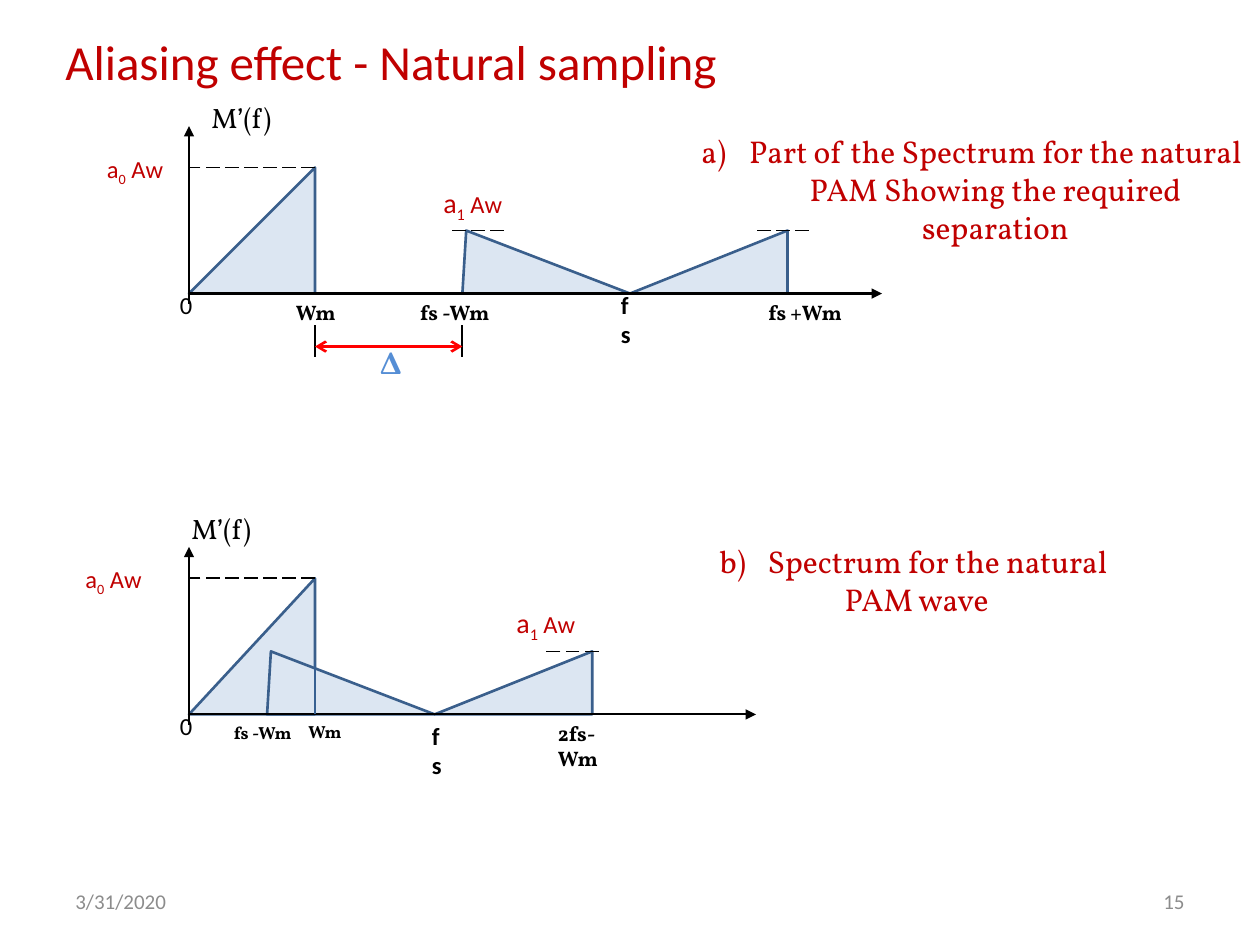
from dataclasses import dataclass

from lxml.etree import SubElement
from pptx import Presentation
from pptx.dml.color import RGBColor
from pptx.enum.dml import MSO_LINE_DASH_STYLE as DASH
from pptx.enum.shapes import MSO_CONNECTOR, MSO_SHAPE
from pptx.enum.text import MSO_ANCHOR, PP_ALIGN
from pptx.oxml.ns import qn
from pptx.util import Inches, Pt


@dataclass(frozen=True)
class Theme:
    sans: str = "Calibri"
    serif: str = "Vollkorn"
    black: str = "000000"
    red: str = "C00000"
    arrow: str = "FF0000"
    grey: str = "8C8C8C"
    delta: str = "558ED5"
    fill: str = "DCE6F2"
    edge: str = "3A5F8C"
    overlap: str = "376092"
    title: int = 28
    caption: int = 18
    axis: int = 16
    label: int = 14
    tick: int = 12
    small_tick: int = 10


T = Theme()
TICK = dict(name=T.serif, size=T.tick, bold=True)
SANS_TICK = dict(size=T.label)


def add_run(p, text, baseline=None, **fmt):
    r = p.add_run()
    r.text = text
    values = dict(name=T.sans, size=T.label, color=T.black) | fmt
    r.font.color.rgb = RGBColor.from_string(values.pop("color"))
    values["size"] = Pt(values["size"])
    for key, value in values.items():
        setattr(r.font, key, value)
    if baseline:
        r.font._element.set("baseline", str(baseline))


def add_text(s, box, *paragraphs, wrap=True, align=PP_ALIGN.LEFT,
             anchor=MSO_ANCHOR.TOP):
    """Each paragraph is a list of (text, format) runs."""
    tf = s.shapes.add_textbox(*map(Inches, box)).text_frame
    tf.word_wrap, tf.vertical_anchor = wrap, anchor
    for i, runs in enumerate(paragraphs):
        p = tf.add_paragraph() if i else tf.paragraphs[0]
        p.alignment = align
        for text, fmt in runs:
            add_run(p, text, **fmt)
    return tf


def add_line(s, start, end, color=T.black, width=1.0, dash=None,
             head=None, tail=None):
    line = s.shapes.add_connector(MSO_CONNECTOR.STRAIGHT,
                                  *map(Inches, (*start, *end)))
    line.line.color.rgb = RGBColor.from_string(color)
    line.line.width = Pt(width)
    if dash:
        line.line.dash_style = dash
    ln = line.line._get_or_add_ln()
    for tag, kind in (("a:headEnd", head), ("a:tailEnd", tail)):
        if kind:
            SubElement(ln, qn(tag), type=kind)
    SubElement(line._element.spPr, qn("a:effectLst"))


def add_triangle(s, box, apex):
    sp = s.shapes.add_shape(MSO_SHAPE.ISOSCELES_TRIANGLE, *map(Inches, box))
    sp.shadow.inherit = False
    sp.adjustments[0] = apex
    sp.fill.solid()
    sp.fill.fore_color.rgb = RGBColor.from_string(T.fill)
    sp.line.color.rgb = RGBColor.from_string(T.edge)
    sp.line.width = Pt(1.5)


def add_amplitude(s, box, index, size):
    red = dict(color=T.red)
    add_text(s, box, [("a", red | dict(size=size)),
                      (index, red | dict(size=size, baseline=-25000)),
                      (" Aw", red)])


def add_spectrum(s, x, y, peak, carrier, length, axis_name, a0, a1, dashes):
    """Axes from the origin (x, y), baseband and two sidebands around carrier.

    The other positions are measured from the origin.
    """
    side, lower, upper = 0.5, 1.33, 1.25
    add_triangle(s, (x, y - peak, 1, peak), 1)
    add_triangle(s, (x + carrier - lower, y - side, lower, side), 0.023)
    add_triangle(s, (x + carrier, y - side, upper, side), 1)
    add_line(s, (x, y + 0.08), (x, y - 1.33), width=1.25, tail="triangle")
    add_line(s, (x, y), (x + length, y), width=1.25, tail="triangle")
    add_line(s, (x + 1, y - peak), (x, y - peak), dash=DASH.LONG_DASH)
    for dx in dashes:
        add_line(s, (x + dx + 0.42, y - side), (x + dx, y - side),
                 dash=DASH.LONG_DASH)
    add_text(s, (x + axis_name, y - 1.58 - (peak - 1), 0.7, 0.37),
             [("M’(f)", dict(name=T.serif, size=T.axis))], wrap=False)
    add_text(s, (x - 0.17, y - 0.08, 0.3, 0.34), [("0", SANS_TICK)], wrap=False)
    add_amplitude(s, (x + a0, y - peak - 0.16, 0.92, 0.34), "0", T.label)
    add_amplitude(s, (x + a1, y - 0.91, 0.92, 0.37), "1", T.axis)


def add_separation(s, left, right, y):
    for x in (left, right):
        add_line(s, (x, y - 0.17), (x, y + 0.08), width=1.25)
    add_line(s, (left, y), (right, y), T.arrow, 1.5, head="arrow", tail="arrow")
    add_text(s, (left + 0.42, y - 0.08, 0.39, 0.4),
             [("Δ", dict(name=T.serif, size=T.caption, bold=True,
                         color=T.delta))], wrap=False)


def add_caption(s, box, start, *lines, wrap):
    fmt = dict(name=T.serif, size=T.caption, color=T.red)
    tf = add_text(s, box, *([(line, fmt)] for line in lines), wrap=wrap,
                  align=PP_ALIGN.CENTER)
    for i, p in enumerate(tf.paragraphs):
        pPr = p._p.get_or_add_pPr()
        pPr.set("marL", str(Inches(0.38)))
        pPr.set("indent", str(-Inches(0.38)))
        if i == 0:
            SubElement(pPr, qn("a:buFont"), typeface="+mj-lt")
            SubElement(pPr, qn("a:buAutoNum"), type="alphaLcParenR",
                       startAt=str(start))


def add_separated_panel(s, x, y):
    add_spectrum(s, x, y, peak=1, carrier=3.5, length=5.5, axis_name=0.08,
                 a0=-0.75, a1=1.92, dashes=(2.08, 4.5))
    add_text(s, (x + 0.75, y, 0.52, 0.3), [("Wm", TICK)], wrap=False)
    add_text(s, (x + 1.36, y, 1.5, 0.3), [("fs -Wm", TICK)],
             align=PP_ALIGN.CENTER, anchor=MSO_ANCHOR.MIDDLE)
    add_text(s, (x + 3.33, y - 0.08, 0.33, 0.34),
             [("fs", SANS_TICK | dict(bold=True))])
    add_text(s, (x + 4.5, y, 0.83, 0.3), [("fs +Wm", TICK)])
    add_separation(s, x + 1, x + 2.17, y + 0.42)
    add_caption(s, (5.42, y - 1.33, 4.58, 1.01), 1,
                "Part of the Spectrum for the natural PAM Showing the required "
                "separation", wrap=True)


def add_aliased_panel(s, x, y):
    add_spectrum(s, x, y, peak=1.08, carrier=1.95, length=4.5, axis_name=-0.08,
                 a0=-0.92, a1=2.5, dashes=(2.83,))
    add_line(s, (x + 1, y - 0.42), (x + 1, y), T.overlap, 1.5)
    small = TICK | dict(size=T.small_tick)
    add_text(s, (x + 0.85, y, 0.47, 0.27), [("Wm", small)], wrap=False)
    add_text(s, (x, y, 1.17, 0.28), [("fs -Wm", small)],
             align=PP_ALIGN.CENTER, anchor=MSO_ANCHOR.MIDDLE)
    add_text(s, (x + 1.83, y, 0.33, 0.34),
             [("fs", SANS_TICK | dict(bold=True))])
    add_text(s, (x + 2.83, y, 0.75, 0.3), [("2fs-Wm", TICK)])
    add_caption(s, (5.58, y - 1.42, 3.39, 0.71), 2,
                "Spectrum for the natural ", "PAM wave", wrap=False)


def add_frame(s):
    middle = dict(anchor=MSO_ANCHOR.MIDDLE)
    add_text(s, (0.42, 0.17, 9, 0.62),
             [("Aliasing effect - Natural sampling",
               dict(size=T.title, color=T.red))], **middle)
    footer = dict(size=T.tick, color=T.grey)
    add_text(s, (0.5, 6.95, 2.33, 0.4), [("3/31/2020", footer)], **middle)
    add_text(s, (7.17, 6.95, 2.33, 0.4), [("15", footer)],
             align=PP_ALIGN.RIGHT, **middle)


def main():
    prs = Presentation()
    prs.slide_width, prs.slide_height = Inches(10), Inches(7.5)
    s = prs.slides.add_slide(prs.slide_layouts[6])
    add_frame(s)
    add_separated_panel(s, 1.5, 2.33)
    add_aliased_panel(s, 1.5, 5.67)
    prs.save("out.pptx")


if __name__ == "__main__":
    main()
